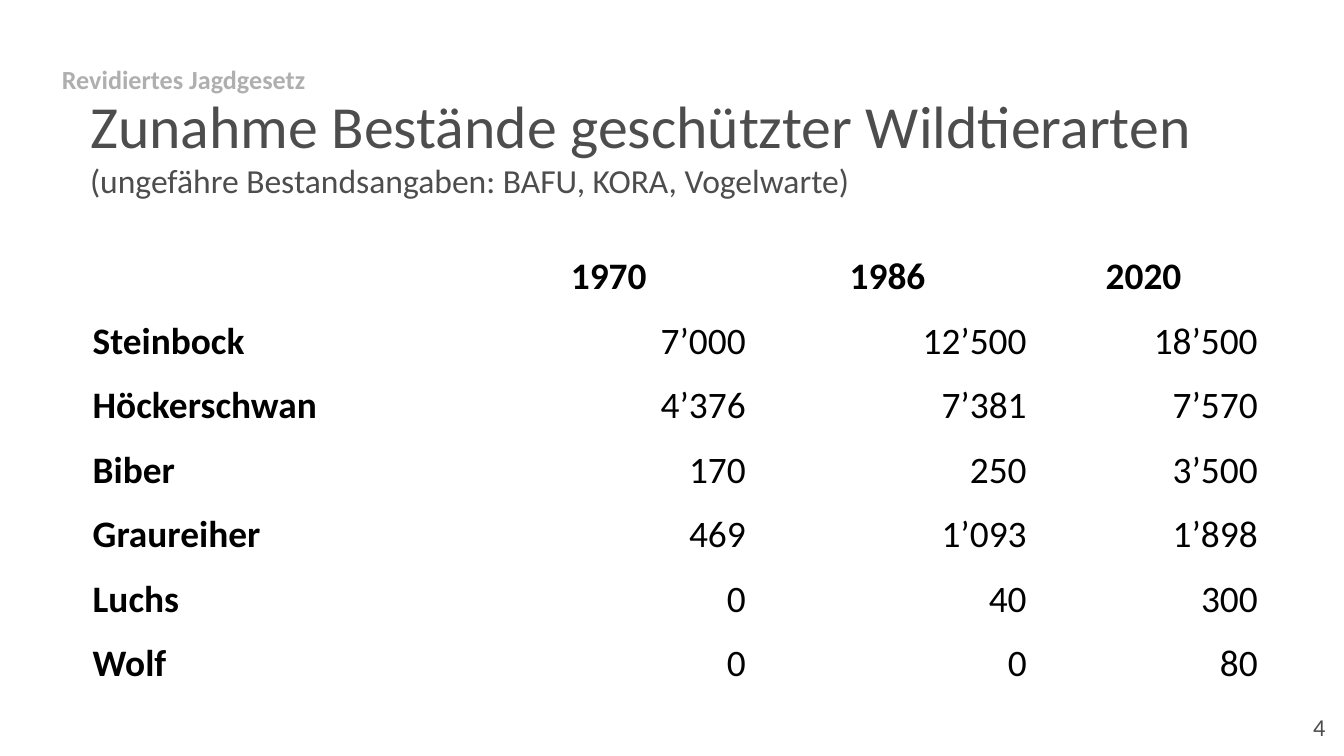
"""Build a slide with a table of protected wildlife populations."""
from dataclasses import dataclass, field

from pptx import Presentation
from pptx import util as u
from pptx.dml.color import RGBColor
from pptx.enum import text

PX = u.Inches(1) // 200
FONT = "Calibri"
BLACK = RGBColor(0x00, 0x00, 0x00)
DARK = RGBColor(0x4D, 0x4D, 0x4D)
PALE = RGBColor(0xAF, 0xAF, 0xAF)
LEFT, MID, RIGHT = text.PP_ALIGN.LEFT, text.PP_ALIGN.CENTER, text.PP_ALIGN.RIGHT

COLS = (564, 412, 418, 344)
ROW = 96
ROWS = (
    ("", "1970", "1986", "2020"),
    ("Steinbock", "7’000", "12’500", "18’500"),
    ("Höckerschwan", "4’376", "7’381", "7’570"),
    ("Biber", "170", "250", "3’500"),
    ("Graureiher", "469", "1’093", "1’898"),
    ("Luchs", "0", "40", "300"),
    ("Wolf", "0", "0", "80"),
)


@dataclass
class Label:
    """A text box: its place, its lines as (words, size) and its format."""
    box: tuple
    lines: tuple
    color: RGBColor
    bold: bool = False
    inset: int = 0
    para: dict = field(default_factory=dict)
    frame: dict = field(default_factory=dict)
    indent: tuple = ()


LABELS = (
    Label((1872, 1038, 120, 86), (("4", 13),), DARK, inset=20,
          para={"alignment": RIGHT},
          frame={"vertical_anchor": text.MSO_ANCHOR.MIDDLE}),
    Label((42, 66, 1830, 62), (("Revidiertes Jagdgesetz", 14),), PALE, True,
          para={"line_spacing": 1.61}, indent=(100, -50)),
    Label((134, 132, 1870, 178),
          (("Zunahme Bestände geschützter Wildtierarten", 32),
           ("(ungefähre Bestandsangaben: BAFU, KORA, Vogelwarte)", 18)),
          DARK),
)


def apply(item: object, form: dict) -> None:
    """Set each format value on the item."""
    for key, val in form.items():
        setattr(item, key, val)


def style(font: object, size: int, color: RGBColor, bold: bool) -> None:
    """Give a font its face, size, weight and colour."""
    apply(font, {"name": FONT, "size": u.Pt(size), "bold": bold})
    font.color.rgb = color


def margins(inset: int) -> dict:
    """Return equal margins on all sides."""
    return {f"margin_{side}": inset * PX
            for side in ("left", "top", "right", "bottom")}


def draw_label(slide: object, label: Label) -> None:
    """Draw one text box with its lines in one paragraph."""
    box = slide.shapes.add_textbox(*(n * PX for n in label.box))
    frame = box.text_frame
    apply(frame, {"word_wrap": True, **margins(label.inset), **label.frame})
    para = frame.paragraphs[0]
    apply(para, label.para)
    if label.indent:
        left, first = label.indent
        props = para._p.get_or_add_pPr()
        props.set("marL", str(left * PX))
        props.set("indent", str(first * PX))
    for i, (words, size) in enumerate(label.lines):
        if i:
            para.add_line_break()
        run = para.add_run()
        run.text = words
        style(run.font, size, label.color, label.bold)


def draw_table(slide: object) -> None:
    """Draw the population table without fills or bands."""
    shape = slide.shapes.add_table(len(ROWS), len(COLS), 136 * PX, 350 * PX,
                                   sum(COLS) * PX, len(ROWS) * ROW * PX)
    table = shape.table
    apply(table, {"first_row": False, "horz_banding": False})
    table._tbl.tblPr.find("{*}tableStyleId").text = (
        "{2D5ABB26-0587-4C30-8999-92F81FD0307C}")
    for col, width in zip(table.columns, COLS):
        col.width = width * PX
    for r, row in enumerate(ROWS):
        table.rows[r].height = ROW * PX
        for c, words in enumerate(row):
            cell = table.cell(r, c)
            apply(cell, {**margins(2), "margin_bottom": 0,
                         "vertical_anchor": text.MSO_ANCHOR.BOTTOM})
            cell.fill.background()
            if not words:
                continue
            para = cell.text_frame.paragraphs[0]
            para.alignment = LEFT if c == 0 else MID if r == 0 else RIGHT
            run = para.add_run()
            run.text = words
            style(run.font, 20, BLACK, r == 0 or c == 0)


def main() -> None:
    """Build and save the slide."""
    deck = Presentation()
    apply(deck, {"slide_width": 2000 * PX, "slide_height": 1125 * PX})
    slide = deck.slides.add_slide(deck.slide_layouts[6])
    draw_table(slide)
    for label in LABELS:
        draw_label(slide, label)
    deck.save("out.pptx")


if __name__ == "__main__":
    main()
